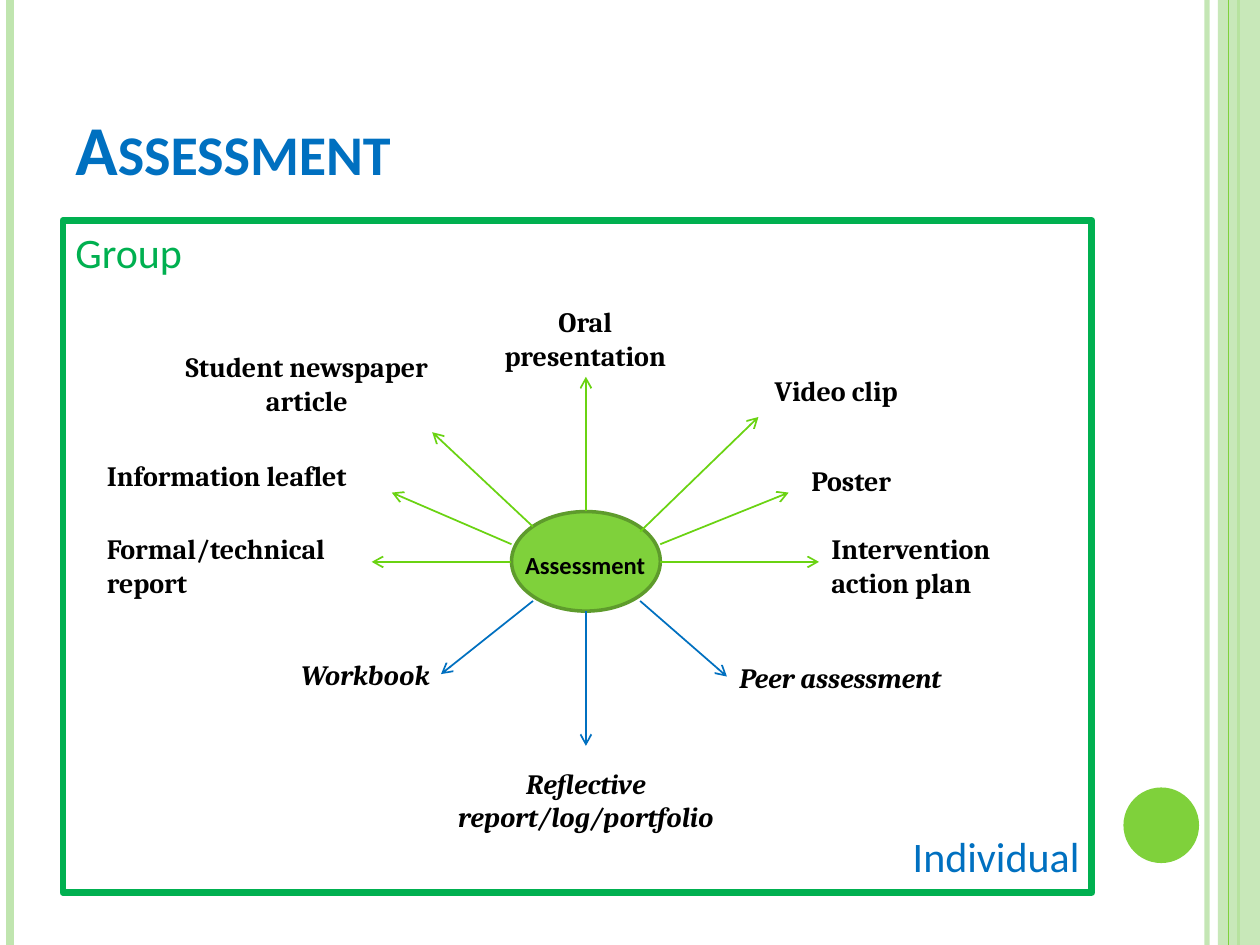
from lxml import etree
from pptx import Presentation
from pptx.dml.color import RGBColor
from pptx.enum.shapes import MSO_CONNECTOR, MSO_SHAPE
from pptx.enum.text import MSO_ANCHOR, PP_ALIGN
from pptx.oxml.ns import qn
from pptx.util import Pt

LEFT, CENTER, RIGHT = PP_ALIGN.LEFT, PP_ALIGN.CENTER, PP_ALIGN.RIGHT
TOP, BOTTOM = MSO_ANCHOR.TOP, MSO_ANCHOR.BOTTOM
OVAL, RECTANGLE = MSO_SHAPE.OVAL, MSO_SHAPE.RECTANGLE
STRAIGHT = MSO_CONNECTOR.STRAIGHT

WIDTH, HEIGHT = 720, 540
GREEN, PALE_GREEN, DARK_GREEN = "7FD13B", "C0E5AF", "5E9B2C"
ARROW_GREEN, GROUP_GREEN, BLUE, BLACK = "6AD312", "00B050", "0070C0", "000000"

# left, top, width, height relative to the frame
GROUP_LABELS = [
    ("Oral presentation", (233.3, 44.6, 130.3, 46), CENTER),
    ("Video clip", (399.6, 84.2, 108, 26.6), LEFT),
    ("Student newspaper article", (56.9, 70.3, 164.9, 46), CENTER),
    ("Intervention action plan", (432, 174.2, 141.8, 46), LEFT),
    ("Formal/technical report", (18, 174.2, 158.4, 46), LEFT),
    ("Information leaflet", (18, 132.5, 175.7, 26.6), LEFT),
    ("Poster", (420.5, 135.4, 118.8, 26.6), LEFT),
]
INDIVIDUAL_LABELS = [
    ("Reflective report/log/portfolio", (211, 308.2, 175.7, 46), CENTER),
    ("Peer assessment", (379.4, 247.7, 160.6, 26.6), LEFT),
    ("Workbook", (120.2, 246.2, 96.5, 26.6), RIGHT),
]
GROUP_ARROWS = [
    ((298.8, 166.3), (298.8, 89.3)),
    ((341.3, 195.1), (432, 195.1)),
    ((256.3, 195.1), (176.4, 195.1)),
    ((329.8, 177.8), (397.4, 112.3)),
    ((268.6, 175), (211, 121)),
    ((256.3, 185), (187.9, 155.5)),
    ((341.3, 185), (414.7, 155.5)),
]
INDIVIDUAL_ARROWS = [
    ((298.8, 223.2), (298.8, 300.2)),
    ((329.8, 217.4), (379.4, 260.6)),
    ((268.6, 217.4), (216, 259.2)),
]


def color(value):
    """Turn a hex string into a colour."""
    return RGBColor.from_string(value)


def set_alpha(shape, percent):
    """Make the only colour of a shape partly transparent."""
    tint = next(shape._element.spPr.iter(qn("a:srgbClr")))
    etree.SubElement(tint, qn("a:alpha")).set("val", str(percent * 1000))


def add_line(page, start, end, tint, weight, arrow=False):
    """Draw a straight line, with an open arrowhead at its end if asked."""
    line = page.shapes.add_connector(STRAIGHT, *map(Pt, start + end))
    line.line.color.rgb = color(tint)
    line.line.width = Pt(weight)
    if arrow:
        etree.SubElement(line.line._get_or_add_ln(), qn("a:tailEnd")).set("type", "arrow")
    etree.SubElement(line._element.spPr, qn("a:effectLst"))
    return line


def add_form(page, kind, box, fill=None, outline=None, weight=1):
    """Draw a preset shape without shadow."""
    form = page.shapes.add_shape(kind, *map(Pt, box))
    form.shadow.inherit = False
    if fill:
        form.fill.solid()
        form.fill.fore_color.rgb = color(fill)
    else:
        form.fill.background()
    if outline:
        form.line.color.rgb = color(outline)
        form.line.width = Pt(weight)
    else:
        form.line.fill.background()
    return form


def write(shape, text, size, tint, face="Calibri", align=LEFT, bold=False, italic=False, anchor=TOP):
    """Set one styled paragraph in a shape and return its run."""
    frame = shape.text_frame
    frame.word_wrap = True
    frame.vertical_anchor = anchor
    para = frame.paragraphs[0]
    para.alignment = align
    para.font.name = face
    para.font.size = Pt(size)
    para.font.bold = bold
    para.font.italic = italic
    para.font.color.rgb = color(tint)
    span = para.add_run()
    span.text = text
    return span


def add_text(page, box, *args, **style):
    """Add a text box with one styled paragraph and return its run."""
    return write(page.shapes.add_textbox(*map(Pt, box)), *args, **style)


def add_side_decoration(page, width, height):
    """Draw the edge stripes and the dot of the theme."""
    def stripe(x, tint, weight):
        return add_line(page, (x, 0), (x, height), tint, weight)

    set_alpha(stripe(width - 30.2, PALE_GREEN, 3), 93)
    stripe(5.8, PALE_GREEN, 4.5)
    stripe(width - 12.2, GREEN, 1.5)
    set_alpha(add_form(page, RECTANGLE, (width - 24, 0, 24, height), PALE_GREEN), 87)
    stripe(width - 18, GREEN, 0.75)
    add_form(page, OVAL, (width - 78, height - 90, 43.2, 43.2), GREEN)


def add_title(page, box):
    """Add the heading in small capitals."""
    span = add_text(page, box, "Assessment", 40, BLUE, bold=True, anchor=BOTTOM)
    span._r.get_or_add_rPr().set("cap", "small")


def add_assessment_map(page, box):
    """Draw the framed map of group and individual assessments."""
    left, top, width, height = box

    def place(part):
        return (left + part[0], top + part[1]) + part[2:]

    frame = add_form(page, RECTANGLE, box, outline=GROUP_GREEN, weight=4)
    write(frame, "Group", 24, GROUP_GREEN)
    add_text(page, place((width - 160, height - 40, 160, 37)), "Individual", 24, BLUE,
             align=RIGHT, anchor=BOTTOM)
    add_form(page, OVAL, place((256.3, 166.3, 85, 56.9)), GREEN, DARK_GREEN, 2)
    add_text(page, place((256.3, 185, 84.2, 24.5)), "Assessment", 14, BLACK, align=CENTER, bold=True)
    for arrows, tint in ((GROUP_ARROWS, ARROW_GREEN), (INDIVIDUAL_ARROWS, BLUE)):
        for start, end in arrows:
            add_line(page, place(start), place(end), tint, 1, arrow=True)
    for labels, italic in ((GROUP_LABELS, False), (INDIVIDUAL_LABELS, True)):
        for text, part, align in labels:
            add_text(page, place(part), text, 16, BLACK, face="Cambria", align=align,
                     bold=True, italic=italic)


def main():
    """Build and save the deck."""
    deck = Presentation()
    deck.slide_width, deck.slide_height = Pt(WIDTH), Pt(HEIGHT)
    page = deck.slides.add_slide(deck.slide_layouts[6])
    add_side_decoration(page, WIDTH, HEIGHT)
    add_title(page, (36, 21.6, 588, 90))
    add_assessment_map(page, (36, 126, 588, 384))
    deck.save("out.pptx")


if __name__ == "__main__":
    main()
